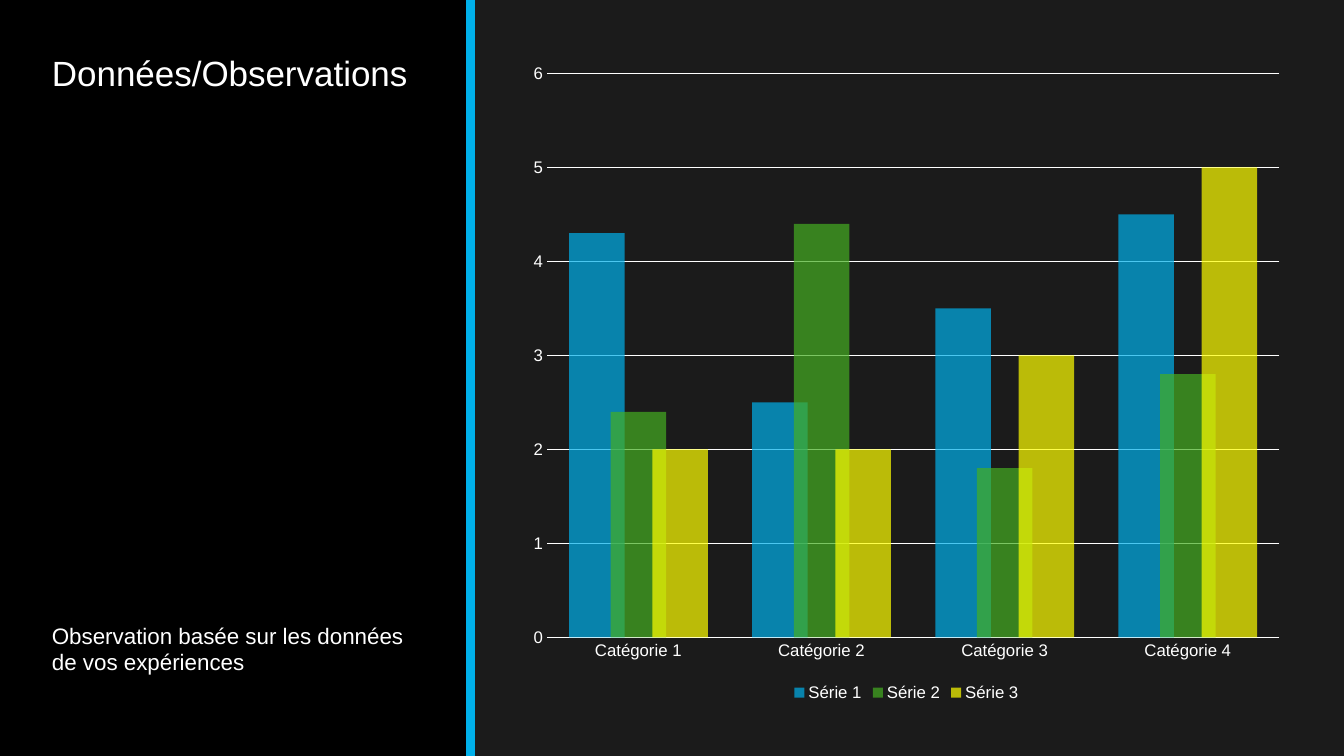
"""Build a slide with a dark side panel and a clustered column chart."""
from dataclasses import dataclass

from lxml import etree
from pptx import Presentation
from pptx.chart.data import CategoryChartData
from pptx.dml.color import RGBColor
from pptx.enum.chart import XL_CHART_TYPE, XL_LEGEND_POSITION, XL_TICK_MARK
from pptx.enum.shapes import MSO_CONNECTOR, MSO_SHAPE
from pptx.enum.text import MSO_ANCHOR, PP_ALIGN
from pptx.oxml.ns import qn
from pptx.slide import Slide
from pptx.text.text import Font
from pptx.util import Pt

COLUMN = XL_CHART_TYPE.COLUMN_CLUSTERED
BELOW = XL_LEGEND_POSITION.BOTTOM
NO_TICK = XL_TICK_MARK.NONE
STRAIGHT = MSO_CONNECTOR.STRAIGHT
RECT = MSO_SHAPE.RECTANGLE
TOP, BOTTOM = MSO_ANCHOR.TOP, MSO_ANCHOR.BOTTOM
LEFT = PP_ALIGN.LEFT

WIDE, HIGH, SPLIT = 960, 540, 336
WHITE, BLACK, DARK, BLUE = "FFFFFF", "000000", "1B1B1B", "00B0EA"
FACE = "Arial"


@dataclass
class Label:
    text: str
    top: float
    height: float
    size: float
    anchor: MSO_ANCHOR
    pitch: float


@dataclass
class Series:
    name: str
    values: tuple[float, ...]
    color: str


LABELS = [
    Label("Données/Observations", 36.72, 126, 25, TOP, 0.9),
    Label("Observation basée sur les données de vos expériences",
          295.2, 190.8, 16, BOTTOM, 1),
]
GROUPS = [f"Catégorie {n}" for n in range(1, 5)]
SERIES = [
    Series("Série 1", (4.3, 2.5, 3.5, 4.5), BLUE),
    Series("Série 2", (2.4, 4.4, 1.8, 2.8), "45AE22"),
    Series("Série 3", (2, 2, 3, 5), "FFFF00"),
]


def color(code: str) -> RGBColor:
    return RGBColor.from_string(code)


def style(font: Font, size: float) -> None:
    font.name = FACE
    font.size = Pt(size)
    font.color.rgb = color(WHITE)


def add_panel(slide: Slide) -> None:
    panel = slide.shapes.add_shape(RECT, 0, 0, Pt(SPLIT), Pt(HIGH))
    panel.shadow.inherit = False
    panel.fill.solid()
    panel.fill.fore_color.rgb = color(BLACK)
    panel.line.fill.background()
    edge = slide.shapes.add_connector(STRAIGHT, Pt(SPLIT), 0, Pt(SPLIT), Pt(HIGH))
    edge.line.color.rgb = color(BLUE)
    edge.line.width = Pt(6)
    etree.SubElement(edge._element.spPr, qn("a:effectLst"))


def add_label(slide: Slide, label: Label) -> None:
    box = slide.shapes.add_textbox(Pt(30), Pt(label.top), Pt(276), Pt(label.height))
    frame = box.text_frame
    frame.word_wrap = True
    frame.vertical_anchor = label.anchor
    para = frame.paragraphs[0]
    para.text = label.text
    para.alignment = LEFT
    para.line_spacing = label.pitch
    style(para.font, label.size)


def add_chart(slide: Slide) -> None:
    data = CategoryChartData()
    data.categories = GROUPS
    for item in SERIES:
        data.add_series(item.name, item.values)
    chart = slide.shapes.add_chart(
        COLUMN, Pt(370), Pt(36.72), Pt(555), Pt(467.28), data).chart
    chart.has_title = False
    style(chart.font, 10)
    chart.has_legend = True
    chart.legend.position = BELOW
    chart.legend.include_in_layout = False
    style(chart.legend.font, 12)

    base, scale = chart.category_axis, chart.value_axis
    for axis in (base, scale):
        axis.major_tick_mark = axis.minor_tick_mark = NO_TICK
        style(axis.tick_labels.font, 12)
    base.format.line.color.rgb = color(WHITE)
    base.format.line.width = Pt(1.25)
    scale.minimum_scale, scale.maximum_scale, scale.major_unit = 0, 6, 1
    scale.format.line.fill.background()
    scale.has_major_gridlines = True
    grid = scale.major_gridlines.format.line
    grid.color.rgb = color(WHITE)
    grid.width = Pt(0.75)

    plot = chart.plots[0]
    plot.gap_width, plot.overlap = 80, 25
    plot.vary_by_categories = False
    for bars, item in zip(plot.series, SERIES):
        bars.invert_if_negative = False
        bars.format.fill.solid()
        bars.format.fill.fore_color.rgb = color(item.color)
        tint = bars._element.spPr.find(".//" + qn("a:srgbClr"))
        etree.SubElement(tint, qn("a:alpha"), val="70000")


def main() -> None:
    deck = Presentation()
    deck.slide_width, deck.slide_height = Pt(WIDE), Pt(HIGH)
    slide = deck.slides.add_slide(deck.slide_layouts[6])
    slide.background.fill.solid()
    slide.background.fill.fore_color.rgb = color(DARK)
    add_panel(slide)
    for label in LABELS:
        add_label(slide, label)
    add_chart(slide)
    deck.save("out.pptx")


if __name__ == "__main__":
    main()
